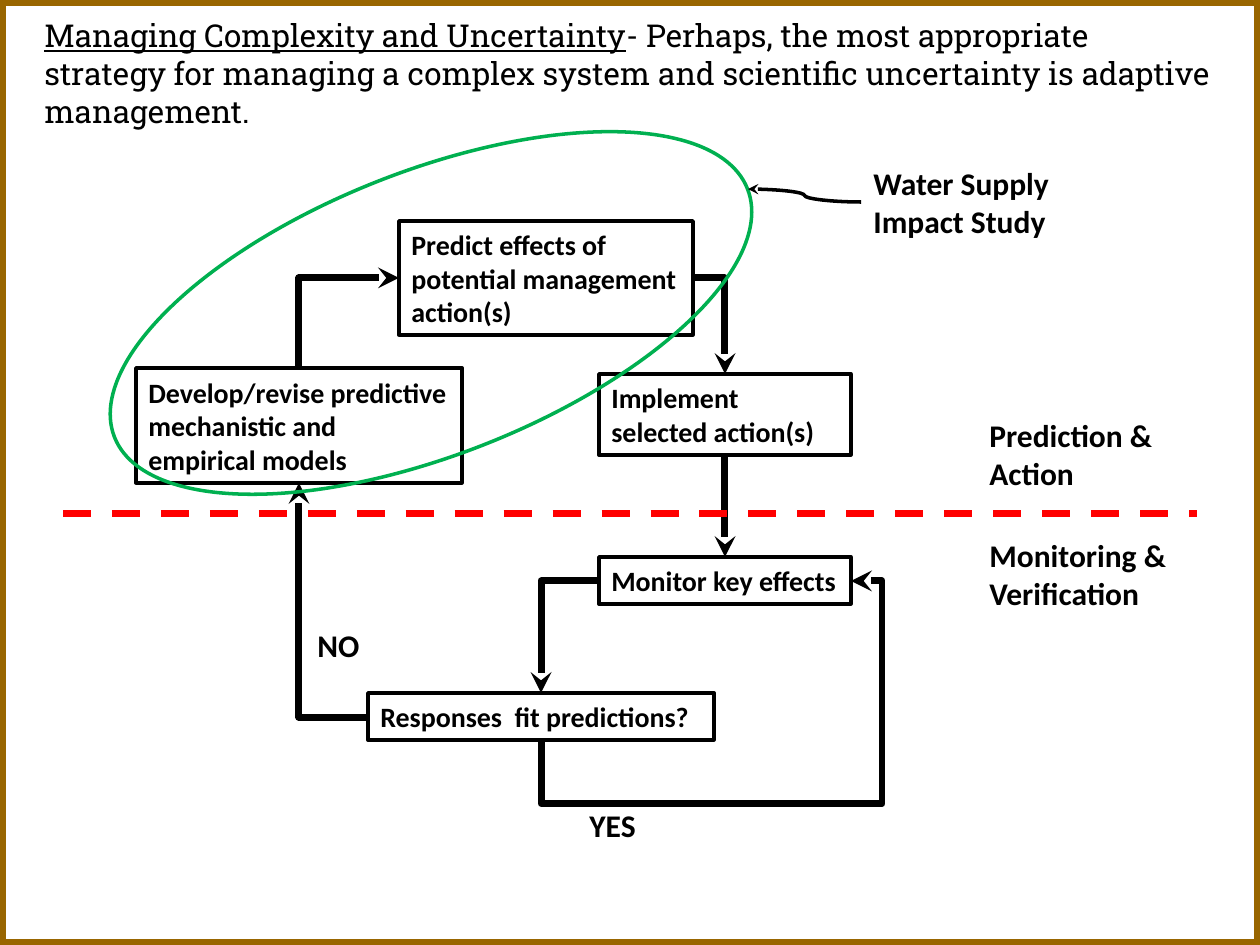
"""Build the adaptive management flow chart slide."""
from dataclasses import dataclass

from lxml import etree
from pptx import Presentation
from pptx import util as u
from pptx.dml.color import RGBColor
from pptx.enum import dml, shapes, text
from pptx.oxml.ns import qn


@dataclass(frozen=True)
class Theme:
    ink: str = "000000"
    divider: str = "FF0000"
    highlight: str = "00B050"
    frame: str = "996600"
    title_font: str = "Roboto Slab"
    body_font: str = "Calibri"
    label_size: int = 18
    box_size: int = 16
    thin: float = 2
    thick: float = 4
    border: float = 6.5


def px(value):
    return u.Emu(round(value * 914400 / 126))


def apply(target, values):
    for name, value in values.items():
        setattr(target, name, value)


class FlowSlide:
    def __init__(self, slide, theme):
        self.slide = slide
        self.theme = theme

    def fill_text(self, shape, runs, size, font_name, anchor):
        apply(shape.text_frame, {
            "word_wrap": True,
            "vertical_anchor": anchor,
            "auto_size": text.MSO_AUTO_SIZE.SHAPE_TO_FIT_TEXT,
        })
        paragraph = shape.text_frame.paragraphs[0]
        paragraph.alignment = text.PP_ALIGN.LEFT
        for words, style in runs:
            run = paragraph.add_run()
            run.text = words
            apply(run.font, {"name": font_name, "size": u.Pt(size), **style})
            run.font.color.rgb = RGBColor.from_string(self.theme.ink)

    def stroke(self, line, color, width):
        line.color.rgb = RGBColor.from_string(color)
        line.width = u.Pt(width)

    def title(self, frame, runs):
        shape = self.slide.shapes.add_textbox(*map(px, frame))
        self.fill_text(shape, runs, self.theme.label_size, self.theme.title_font,
                       text.MSO_ANCHOR.TOP)

    def label(self, frame, words):
        shape = self.slide.shapes.add_textbox(*map(px, frame))
        self.fill_text(shape, [(words, {"bold": True})], self.theme.label_size,
                       self.theme.body_font, text.MSO_ANCHOR.TOP)

    def outline(self, kind, frame, color, width, rotation=0):
        shape = self.slide.shapes.add_shape(kind, *map(px, frame))
        shape.shadow.inherit = False
        shape.fill.background()
        shape.rotation = rotation
        self.stroke(shape.line, color, width)
        return shape

    def box(self, frame, words):
        shape = self.outline(shapes.MSO_SHAPE.RECTANGLE, frame,
                             self.theme.ink, self.theme.thin)
        self.fill_text(shape, [(words, {"bold": True})], self.theme.box_size,
                       self.theme.body_font, text.MSO_ANCHOR.MIDDLE)
        return shape

    def connector(self, kind, start, end, color, width, arrow=True):
        connector = self.slide.shapes.add_connector(kind, *map(px, start + end))
        self.stroke(connector.line, color, width)
        properties = connector._element.spPr
        if arrow:
            etree.SubElement(properties.find(qn("a:ln")), qn("a:tailEnd"), type="stealth")
        etree.SubElement(properties, qn("a:effectLst"))
        return connector

    def divider(self, start, end):
        connector = self.connector(shapes.MSO_CONNECTOR.STRAIGHT, start, end,
                                   self.theme.divider, self.theme.thick, arrow=False)
        connector.line.dash_style = dml.MSO_LINE.DASH

    def straight(self, upper, lower):
        connector = self.connector(shapes.MSO_CONNECTOR.STRAIGHT, (0, 0), (0, 0),
                                   self.theme.ink, self.theme.thick)
        connector.begin_connect(upper, 2)
        connector.end_connect(lower, 0)

    def routed(self, start, end, preset="bentConnector2", rotation=0, flips="",
               adjustments=(), width=None):
        kind = shapes.MSO_CONNECTOR.ELBOW
        connector = self.connector(kind, start, end, self.theme.ink,
                                   width or self.theme.thick)
        across, down = (abs(b - a) for a, b in zip(start, end))
        if rotation % 180:
            across, down = down, across
        apply(connector, {
            "left": px((start[0] + end[0] - across) / 2),
            "top": px((start[1] + end[1] - down) / 2),
            "width": px(across),
            "height": px(down),
        })
        properties = connector._element.spPr
        transform = properties.find(qn("a:xfrm"))
        transform.set("rot", str(rotation * 60000))
        for axis in "hv":
            transform.set(f"flip{axis.upper()}", str(int(axis in flips)))
        geometry = properties.find(qn("a:prstGeom"))
        geometry.set("prst", preset)
        guides = geometry.find(qn("a:avLst"))
        for number, value in enumerate(adjustments, 1):
            etree.SubElement(guides, qn("a:gd"), name=f"adj{number}",
                             fmla=f"val {round(value * 100000)}")


def main():
    presentation = Presentation()
    apply(presentation, {"slide_width": px(1260), "slide_height": px(945)})
    theme = Theme()
    flow = FlowSlide(presentation.slides.add_slide(presentation.slide_layouts[6]), theme)

    flow.title((32, 10, 1197, 127), [
        ("Managing Complexity and Uncertainty", {"underline": True}),
        ("- Perhaps, the most appropriate strategy for managing a complex system "
         "and scientific uncertainty is adaptive management.", {}),
    ])

    flow.box((136, 368, 326, 115), "Develop/revise predictive mechanistic and empirical models")
    flow.box((399, 221, 294, 114), "Predict effects of potential management action(s)")
    implement = flow.box((599, 374, 252, 81), "Implement selected action(s)")
    monitor = flow.box((599, 557, 252, 47), "Monitor key effects")
    flow.box((368, 693, 346, 47), "Responses  fit predictions?")

    flow.routed((299, 368), (399, 278), rotation=90, flips="hv")
    flow.routed((693, 278), (725, 374))
    flow.straight(implement, monitor)
    flow.routed((599, 581), (541, 693), rotation=180, flips="v")
    flow.routed((368, 717), (299, 483), rotation=180)
    flow.routed((541, 740), (851, 581), "bentConnector4", 90, "hv", (-0.4, 1.1))

    flow.divider((63, 514), (1197, 514))
    for frame, words in (
        ((577, 800, 136, 50), "YES"),
        ((305, 620, 136, 50), "NO"),
        ((977, 410, 199, 89), "Prediction & Action"),
        ((977, 530, 221, 89), "Monitoring & Verification"),
        ((861, 158, 231, 89), "Water Supply Impact Study"),
    ):
        flow.label(frame, words)

    flow.outline(shapes.MSO_SHAPE.OVAL, (91, 171, 680, 284), theme.highlight,
                 theme.thin, rotation=338.6)
    flow.routed((861, 202), (748, 189), "curvedConnector3", 180,
                adjustments=(0.5,), width=theme.thin)
    flow.outline(shapes.MSO_SHAPE.RECTANGLE, (0, 0, 1260, 945), theme.frame, theme.border)
    presentation.save("out.pptx")


if __name__ == "__main__":
    main()
